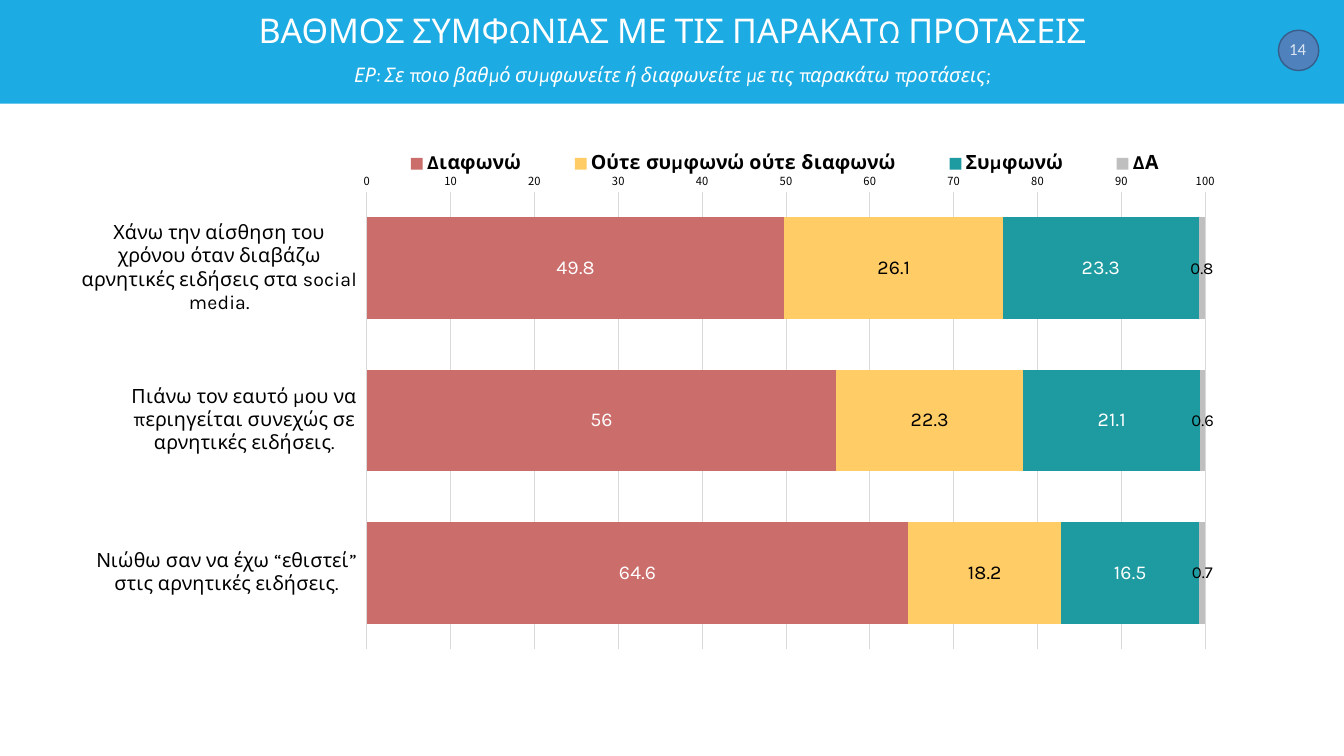
"""Build the slide on agreement with statements about negative news."""
from lxml import etree
from pptx import Presentation
from pptx.chart.data import CategoryChartData
from pptx.dml.color import RGBColor
from pptx.enum import chart as kinds, shapes, text
from pptx.oxml import ns
from pptx.util import Inches, Pt

SKY = RGBColor(0x1C, 0xAB, 0xE2)
BADGE = RGBColor(0x4F, 0x81, 0xBD)
BADGE_EDGE = RGBColor(0x38, 0x5D, 0x8A)
BADGE_TEXT = RGBColor(0xDC, 0xE6, 0xF2)
ROSE = RGBColor(0xCB, 0x6D, 0x6B)
AMBER = RGBColor(0xFF, 0xCC, 0x66)
TEAL = RGBColor(0x1D, 0x9B, 0xA1)
SILVER = RGBColor(0xBF, 0xBF, 0xBF)
GRID = RGBColor(0xD9, 0xD9, 0xD9)
WHITE = RGBColor(0xFF, 0xFF, 0xFF)
BLACK = RGBColor(0, 0, 0)

WIDTH, HEIGHT, BAND = 13.33, 7.5, 1.03
HEADING = [
    ("ΒΑΘΜΟΣ ΣΥΜΦΩΝΙΑΣ ΜΕ ΤΙΣ ΠΑΡΑΚΑΤΩ ΠΡΟΤΑΣΕΙΣ", 24.3, False, 0),
    ("ΕΡ: Σε ποιο βαθμό συμφωνείτε ή διαφωνείτε με τις παρακάτω προτάσεις;", 14.4, True, 10),
]
STATEMENTS = [
    "Χάνω την αίσθηση του χρόνου όταν διαβάζω αρνητικές ειδήσεις στα social media.",
    "Πιάνω τον εαυτό μου να περιηγείται συνεχώς σε αρνητικές ειδήσεις.",
    "Νιώθω σαν να έχω “εθιστεί” στις αρνητικές ειδήσεις.",
]
ANSWERS = [
    ("Διαφωνώ", (49.8, 56, 64.6), ROSE, WHITE, 14),
    ("Ούτε συμφωνώ ούτε διαφωνώ", (26.1, 22.3, 18.2), AMBER, BLACK, 14),
    ("Συμφωνώ", (23.3, 21.1, 16.5), TEAL, WHITE, 14),
    ("ΔΑ", (0.8, 0.6, 0.7), SILVER, BLACK, 12),
]
CHART_AREA = (0.81, 1.37, 11.5, 5.64)
PLOT_SHARES = (0.243, 0.095, 0.726, 0.804)
LEGEND_SHARES = (0.24, 0.01, 0.73, 0.07)


def inches(*lengths):
    return [Inches(length) for length in lengths]


def set_font(font, size, color, name="Karla", bold=False, italic=False):
    font.size, font.name, font.bold, font.italic = Pt(size), name, bold, italic
    font.color.rgb = color


def add_block(page, kind, area, fill, edge=None):
    block = page.shapes.add_shape(kind, *inches(*area))
    block.shadow.inherit = False
    block.fill.solid()
    block.fill.fore_color.rgb = fill
    if edge is None:
        block.line.fill.background()
    else:
        block.line.color.rgb = edge
        block.line.width = Pt(1)


def add_text(page, area, lines, color, font_name):
    frame = page.shapes.add_textbox(*inches(*area)).text_frame
    frame.word_wrap = True
    frame.vertical_anchor = text.MSO_ANCHOR.MIDDLE
    for index, (words, size, italic, gap) in enumerate(lines):
        para = frame.add_paragraph() if index else frame.paragraphs[0]
        para.text = words
        para.alignment = text.PP_ALIGN.CENTER
        para.line_spacing = 0.9
        if gap:
            para.space_before = Pt(gap)
        set_font(para.font, size, color, font_name, italic=italic)


def set_layout(parent, shares, inner=False):
    for stale in parent.findall(ns.qn("c:layout")):
        parent.remove(stale)
    layout = etree.Element(ns.qn("c:layout"))
    manual = etree.SubElement(layout, ns.qn("c:manualLayout"))
    settings = [("layoutTarget", "inner")] if inner else []
    settings += [("xMode", "edge"), ("yMode", "edge"), *zip("xywh", shares)]
    for tag, value in settings:
        etree.SubElement(manual, ns.qn(f"c:{tag}")).set("val", str(value))
    parent.insert(0 if inner else 1, layout)


def add_answers(page):
    data = CategoryChartData()
    data.categories = STATEMENTS
    for name, values, *_ in ANSWERS:
        data.add_series(name, values)
    chart = page.shapes.add_chart(
        kinds.XL_CHART_TYPE.BAR_STACKED, *inches(*CHART_AREA), data).chart
    chart.has_title = False
    set_font(chart.font, 11, BLACK, "Noto Sans CJK TC")
    chart.has_legend = True
    chart.legend.position = kinds.XL_LEGEND_POSITION.BOTTOM
    chart.legend.include_in_layout = False
    set_font(chart.legend.font, 14, BLACK, bold=True)
    set_layout(chart.legend._element, LEGEND_SHARES)
    set_layout(chart._chartSpace.chart.plotArea, PLOT_SHARES, inner=True)

    rows, scale = chart.category_axis, chart.value_axis
    for axis in (rows, scale):
        axis.major_tick_mark = axis.minor_tick_mark = kinds.XL_TICK_MARK.NONE
    rows.reverse_order = True
    rows.crosses = kinds.XL_AXIS_CROSSES.MAXIMUM
    rows.tick_label_position = kinds.XL_TICK_LABEL_POSITION.LOW
    set_font(rows.tick_labels.font, 14, BLACK)
    set_font(scale.tick_labels.font, 8, BLACK, "Noto Sans CJK TC")
    scale.minimum_scale, scale.maximum_scale, scale.major_unit = 0, 100, 10
    scale.format.line.fill.background()
    for line in (rows.format.line, scale.major_gridlines.format.line):
        line.color.rgb = GRID
        line.width = Pt(0.75)

    plot = chart.plots[0]
    plot.gap_width, plot.overlap, plot.vary_by_categories = 50, 100, False
    for series, (_, _, fill, ink, size) in zip(plot.series, ANSWERS):
        series.format.fill.solid()
        series.format.fill.fore_color.rgb = fill
        labels = series.data_labels
        labels.show_value = True
        labels.position = kinds.XL_LABEL_POSITION.CENTER
        set_font(labels.font, size, ink)


def main():
    deck = Presentation()
    deck.slide_width, deck.slide_height = inches(WIDTH, HEIGHT)
    page = deck.slides.add_slide(deck.slide_layouts[6])
    add_block(page, shapes.MSO_SHAPE.RECTANGLE, (0, 0, WIDTH, BAND), SKY)
    add_block(page, shapes.MSO_SHAPE.OVAL, (12.68, 0.3, 0.4, 0.4), BADGE, BADGE_EDGE)
    add_text(page, (12.42, 0.06, 0.9, 0.88), [("14", 12, False, 0)], BADGE_TEXT, "Calibri")
    add_text(page, (0.92, 0.06, 11.5, 0.88), HEADING, WHITE, "Karla")
    add_answers(page)
    deck.save("out.pptx")


if __name__ == "__main__":
    main()
